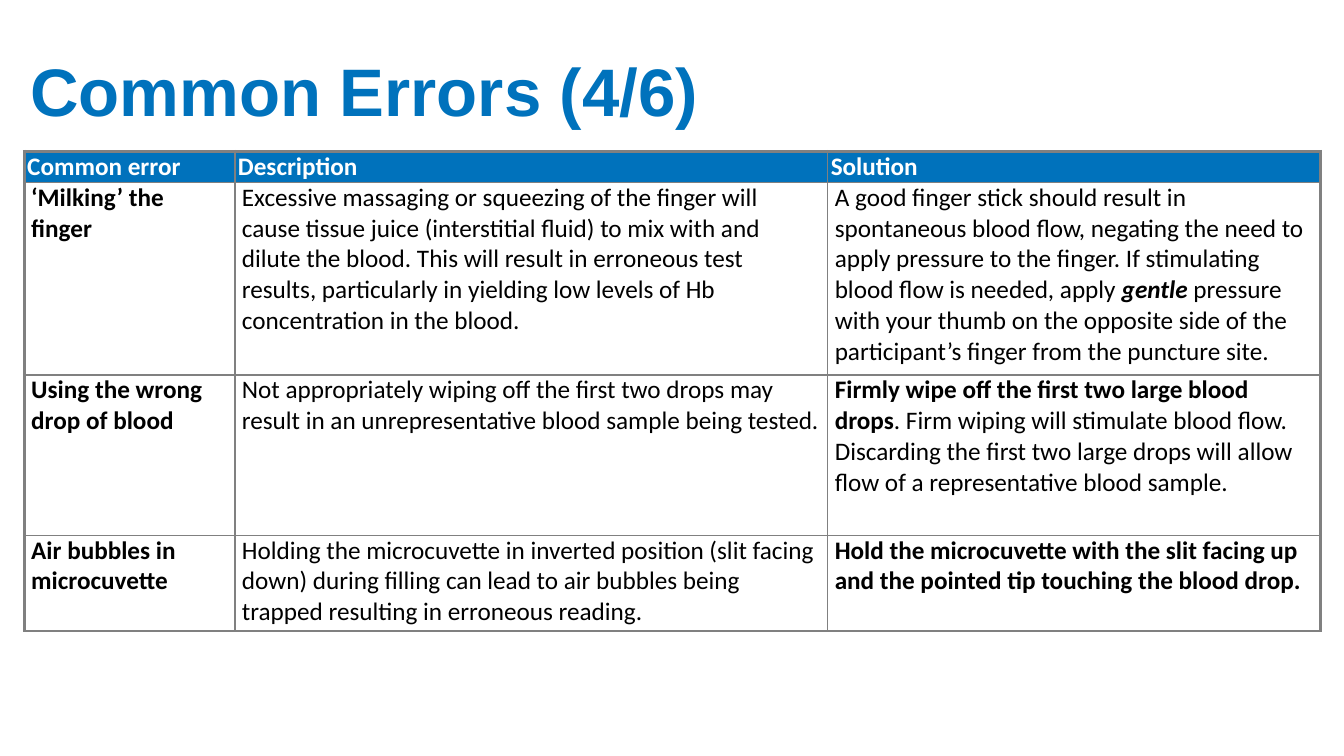
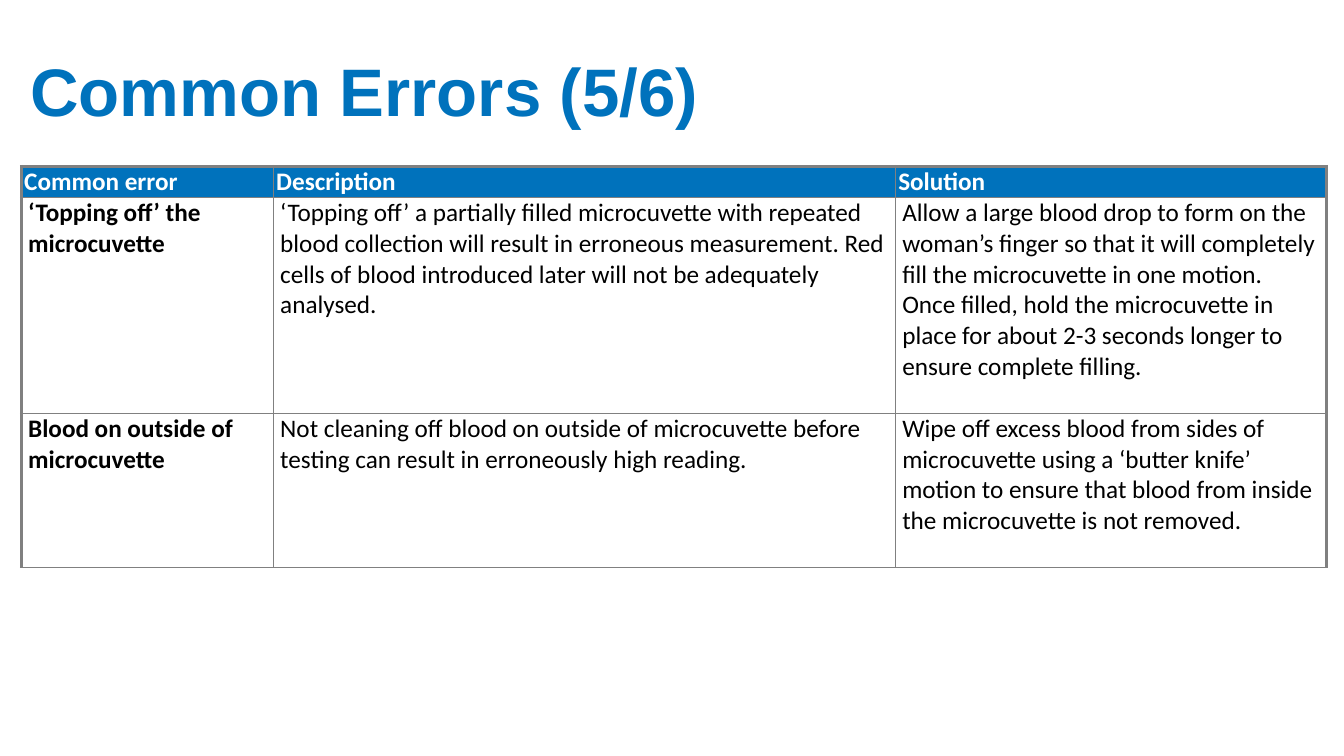
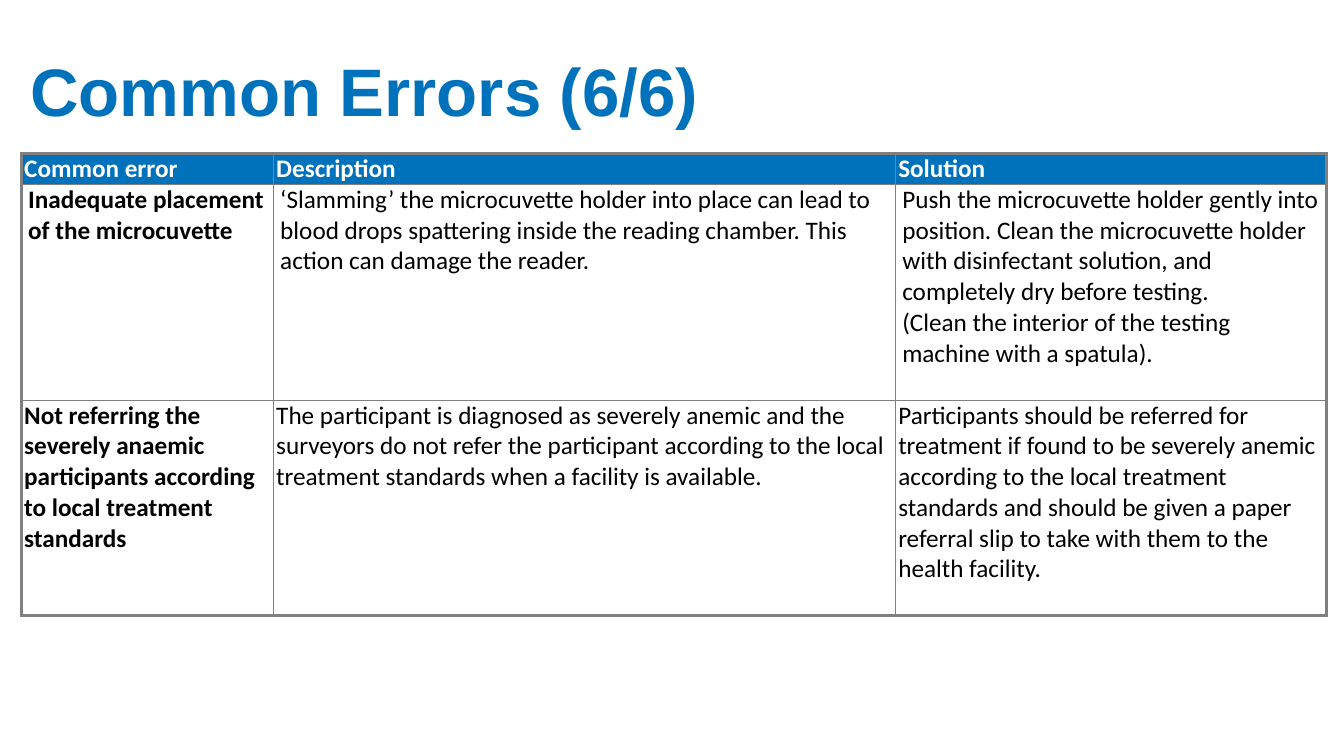
from dataclasses import dataclass
from typing import NamedTuple

from lxml import etree
from pptx import Presentation
from pptx.dml import color
from pptx.enum import text
from pptx.oxml import ns
from pptx import util as u

HUES = {"blue": "0072BC", "grey": "808080", "white": "FFFFFF", "black": "000000"}
HEADS = ("Common error", "Description", "Solution")
THIN, THICK = 1, 2.25
SNUG, WIDE = 0.03, 0.07


class Run(NamedTuple):
    text: str
    bold: bool = False
    slant: bool = False


Para = tuple[Run, ...]
Cell = tuple[Para, ...]


@dataclass
class Row:
    height: float
    cells: tuple[Cell, ...]
    pad: float = WIDE


@dataclass
class Page:
    number: int
    left: float
    top: float
    cols: tuple[float, ...]
    rows: list[Row]
    base: float = THIN


def plain(words: str, bold: bool = False) -> Cell:
    return ((Run(words, bold),),)


def entry(height: float, error: str, cause: str, cure: str | Cell, pad: float = WIDE) -> Row:
    fix = plain(cure) if isinstance(cure, str) else cure
    return Row(height, (plain(error, True), plain(cause), fix), pad)


def rgb(hue: str) -> color.RGBColor:
    return color.RGBColor.from_string(HUES[hue])


def style(font, face: str, size: float, hue: str) -> None:
    font.name = face
    font.size = u.Pt(size)
    font.color.rgb = rgb(hue)


def edge(cell, side: str, width: float) -> None:
    line = etree.SubElement(cell._tc.get_or_add_tcPr(), ns.qn(f"a:ln{side}"), w=str(u.Pt(width)))
    fill = etree.SubElement(line, ns.qn("a:solidFill"))
    etree.SubElement(fill, ns.qn("a:srgbClr"), val=HUES["grey"])


def write(frame, paras: Cell, hue: str) -> None:
    for i, runs in enumerate(paras):
        para = frame.add_paragraph() if i else frame.paragraphs[0]
        style(para.font, "Calibri", 18, hue)
        same = len(runs) == 1
        if same:
            para.font.bold = runs[0].bold
        for item in runs:
            run = para.add_run()
            run.text = item.text
            if not same:
                run.font.bold = item.bold
                run.font.italic = item.slant


def title(slide, words: str) -> None:
    box = slide.shapes.add_textbox(u.Inches(0.3), u.Inches(0.3), u.Inches(12.77), u.Inches(1))
    frame = box.text_frame
    frame.word_wrap = True
    frame.vertical_anchor = text.MSO_ANCHOR.BOTTOM
    frame.margin_left = frame.margin_right = frame.margin_top = frame.margin_bottom = 0
    para = frame.paragraphs[0]
    para.text = words
    para.line_spacing = 0.9
    style(para.font, "Arial", 48, "blue")
    para.font.bold = True


def grid(slide, page: Page) -> None:
    head = Row(0.31, tuple(plain(name, True) for name in HEADS), SNUG)
    rows = [head, *page.rows]
    table = slide.shapes.add_table(
        len(rows), len(page.cols), u.Inches(page.left), u.Inches(page.top),
        u.Inches(sum(page.cols)), u.Inches(sum(row.height for row in rows)),
    ).table
    table.first_row = table.horz_banding = False
    for col, width in zip(table.columns, page.cols):
        col.width = u.Inches(width)
    for r, row in enumerate(rows):
        table.rows[r].height = u.Inches(row.height)
        for c, paras in enumerate(row.cells):
            cell = table.cell(r, c)
            cell.margin_left = cell.margin_right = u.Inches(row.pad)
            cell.margin_top = cell.margin_bottom = 0
            edge(cell, "L", THIN if c else THICK)
            edge(cell, "R", THICK if c == len(page.cols) - 1 else THIN)
            edge(cell, "T", THIN if r else THICK)
            edge(cell, "B", page.base if r == len(rows) - 1 else THIN)
            cell.fill.solid()
            cell.fill.fore_color.rgb = rgb("white" if r else "blue")
            write(cell.text_frame, paras, "black" if r else "white")


PAGES = [
    Page(4, 0.24, 1.5, (2.09, 5.88, 4.89), [
        entry(
            1.91, "‘Milking’ the finger",
            "Excessive massaging or squeezing of the finger will cause tissue juice (interstitial fluid) "
            "to mix with and dilute the blood. This will result in erroneous test results, particularly "
            "in yielding low levels of Hb concentration in the blood.",
            ((
                Run("A good finger stick should result in spontaneous blood flow, negating the need to "
                    "apply pressure to the finger. If stimulating blood flow is needed, apply "),
                Run("gentle", True, True),
                Run(" pressure with your thumb on the opposite side of the participant’s finger from "
                    "the puncture site."),
            ),),
        ),
        entry(
            1.59, "Using the wrong drop of blood",
            "Not appropriately wiping off the first two drops may result in an unrepresentative blood "
            "sample being tested.",
            ((
                Run("Firmly wipe off the first two large blood drops", True),
                Run(". Firm wiping will stimulate blood flow. Discarding the first two large drops will "
                    "allow flow of a representative blood sample."),
            ),),
        ),
        entry(
            0.95, "Air bubbles in microcuvette",
            "Holding the microcuvette in inverted position (slit facing down) during filling can lead to "
            "air bubbles being trapped resulting in erroneous reading.",
            plain("Hold the microcuvette with the slit facing up and the pointed tip touching the "
                  "blood drop.", True),
        ),
    ]),
    Page(5, 0.21, 1.65, (2.5, 6.17, 4.28), [
        entry(
            2.14, "‘Topping off’ the microcuvette",
            "‘Topping off’ a partially filled microcuvette with repeated blood collection will result in "
            "erroneous measurement. Red cells of blood introduced later will not be adequately analysed.",
            "Allow a large blood drop to form on the woman’s finger so that it will completely fill the "
            "microcuvette in one motion. Once filled, hold the microcuvette in place for about 2-3 "
            "seconds longer to ensure complete filling.",
        ),
        entry(
            1.53, "Blood on outside of microcuvette",
            "Not cleaning off blood on outside of microcuvette before testing can result in erroneously "
            "high reading.",
            "Wipe off excess blood from sides of microcuvette using a ‘butter knife’ motion to ensure "
            "that blood from inside the microcuvette is not removed.",
        ),
    ]),
    Page(6, 0.21, 1.52, (2.5, 6.17, 4.28), [
        entry(
            2.14, "Inadequate placement of the microcuvette",
            "‘Slamming’ the microcuvette holder into place can lead to blood drops spattering inside the "
            "reading chamber. This action can damage the reader.",
            plain("Push the microcuvette holder gently into position. Clean the microcuvette holder with "
                  "disinfectant solution, and completely dry before testing.")
            + plain("(Clean the interior of the testing machine with a spatula)."),
        ),
        entry(
            2.14, "Not referring the severely anaemic participants according to local treatment standards",
            "The participant is diagnosed as severely anemic and the surveyors do not refer the "
            "participant according to the local treatment standards when a facility is available.",
            "Participants should be referred for treatment if found to be severely anemic according to "
            "the local treatment standards and should be given a paper referral slip to take with them "
            "to the health facility.",
            SNUG,
        ),
    ], THICK),
]


def main() -> None:
    deck = Presentation()
    deck.slide_width, deck.slide_height = u.Inches(13.33), u.Inches(7.5)
    for page in PAGES:
        slide = deck.slides.add_slide(deck.slide_layouts[6])
        grid(slide, page)
        title(slide, f"Common Errors ({page.number}/6)")
    deck.save("out.pptx")


if __name__ == "__main__":
    main()
